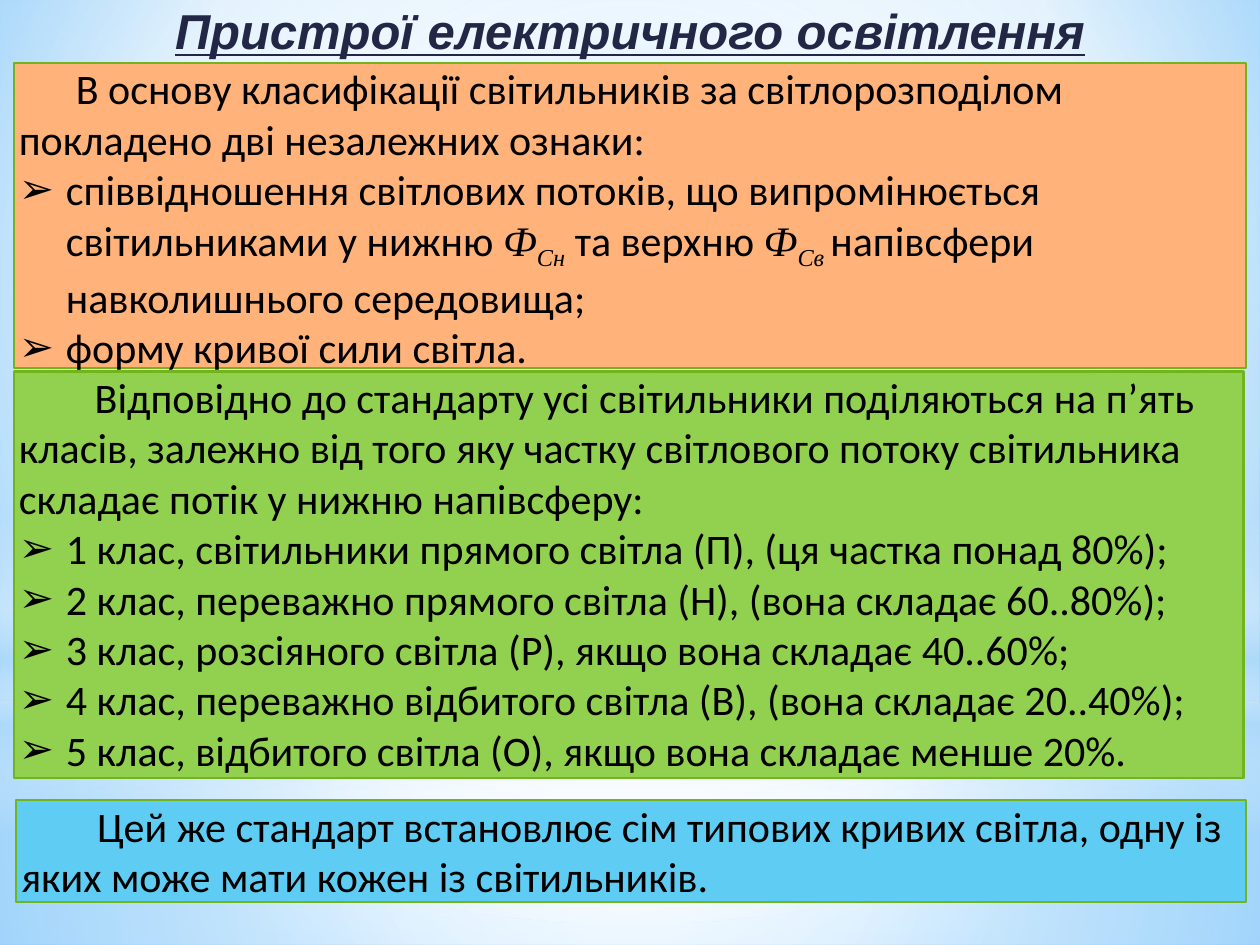
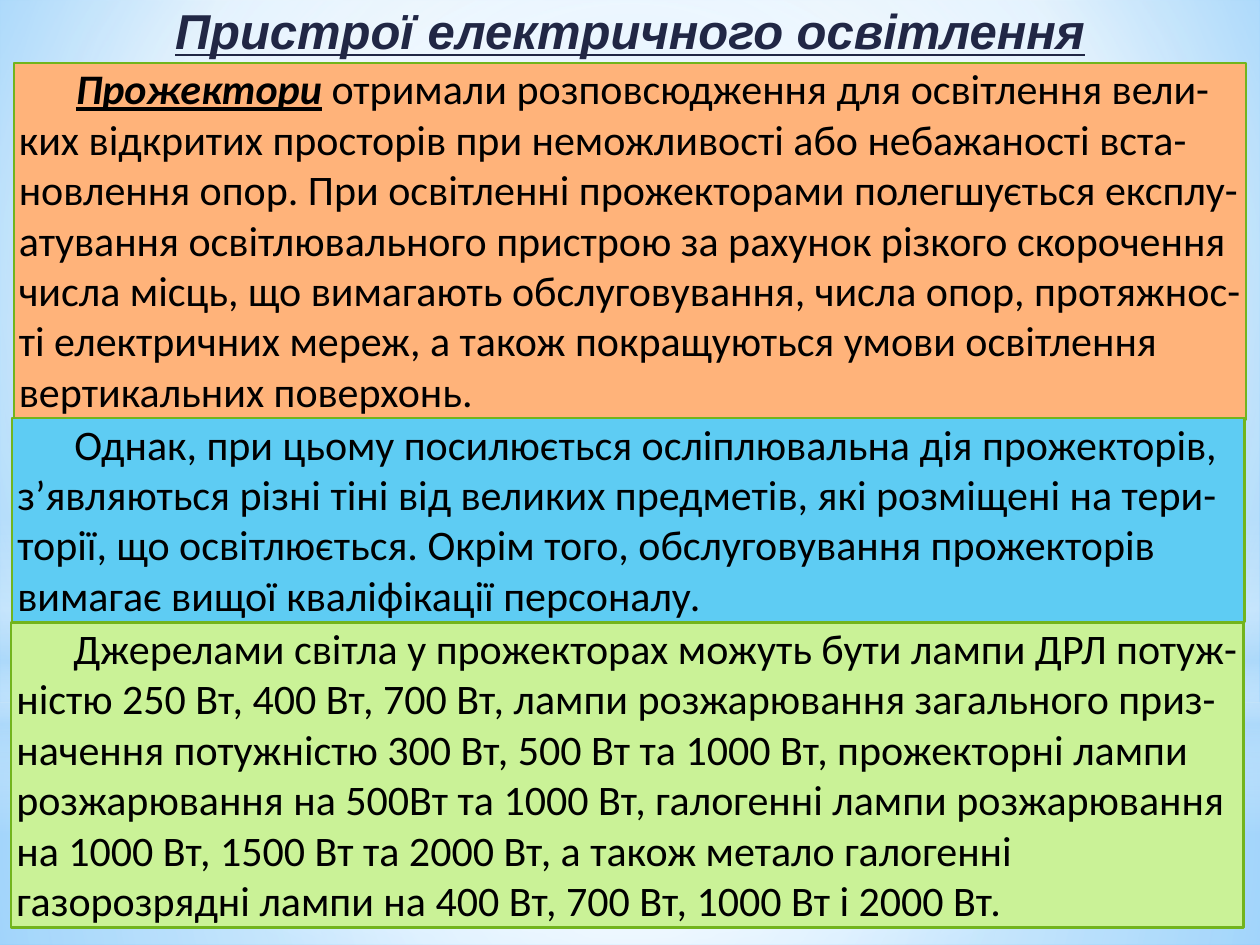
from lxml import etree
from pptx import Presentation
from pptx import util as u
from pptx.dml.color import RGBColor
from pptx.enum import shapes, text
from pptx.oxml import ns

ORANGE, GREEN, BLUE, LIME = "FFB37A", "92D050", "5ECCF3", "CAF297"
BORDER, INK, TITLE_INK = "72B41D", "000000", "212745"
WHITE, HAZE = "FFFFFF", "B4DCFA"
WIDTH, HEIGHT = 25.4, 19.05
HORIZON = 14.17
CENTRE = (50, 50, 50, 50)
TITLE = "Пристрої електричного освітлення"


def rgb(value):
    return RGBColor.from_string(value)


def child(parent, tag, **attributes):
    element = etree.SubElement(parent, ns.qn(tag))
    for name, value in attributes.items():
        element.set(name, str(value))
    return element


def set_gradient(properties, stops, focus=None):
    """Swap a solid fill for (position, colour, opacity) stops, in percent.

    With a focus rectangle the gradient is circular, otherwise it runs downwards.
    """
    solid = properties.find(ns.qn("a:solidFill"))
    gradient = etree.Element(ns.qn("a:gradFill"), rotWithShape="1")
    stop_list = child(gradient, "a:gsLst")
    for position, colour, opacity in stops:
        stop = child(stop_list, "a:gs", pos=position * 1000)
        tint = child(stop, "a:srgbClr", val=colour)
        if opacity < 100:
            child(tint, "a:alpha", val=opacity * 1000)
    if focus:
        circle = child(gradient, "a:path", path="circle")
        sides = {side: value * 1000 for side, value in zip("ltrb", focus)}
        child(circle, "a:fillToRect", **sides)
    else:
        child(gradient, "a:lin", ang=90 * 60000, scaled=0)
    properties.replace(solid, gradient)


class Deck:
    def __init__(self):
        self.presentation = Presentation()
        self.presentation.slide_width = u.Cm(WIDTH)
        self.presentation.slide_height = u.Cm(HEIGHT)
        self.layout = self.presentation.slide_layouts[6]
        self.slide = None

    def add_slide(self):
        first = self.slide is None
        self.slide = self.presentation.slides.add_slide(self.layout)
        if first:
            self.backdrop()
        self.title()

    def backdrop(self):
        """Put the sky gradient and its haze layers on the shared layout."""
        for placeholder in list(self.layout.placeholders):
            placeholder.element.getparent().remove(placeholder.element)
        self.layout.background.fill.solid()
        sky = self.layout.element.find(".//" + ns.qn("p:bgPr"))
        set_gradient(sky, [(0, "9ED5FF", 100), (60, WHITE, 100), (100, "5BB9FF", 100)],
                     (20, 10, 20, 60))
        rectangle, oval = shapes.MSO_SHAPE.RECTANGLE, shapes.MSO_SHAPE.OVAL
        self.haze(rectangle, HORIZON, HEIGHT - HORIZON,
                  [(0, WHITE, 91), (37, WHITE, 76), (100, HAZE, 79)], CENTRE)
        self.haze(rectangle, 0, HORIZON,
                  [(0, WHITE, 89), (48, WHITE, 62), (100, HAZE, 79)], CENTRE)
        self.haze(rectangle, 10.46, 6.35,
                  [(0, WHITE, 0), (29, WHITE, 30), (45, HAZE, 40),
                   (55, WHITE, 26), (65, HAZE, 60), (100, WHITE, 0)])
        self.haze(oval, 4.45, HORIZON, [(0, WHITE, 100), (56, WHITE, 0)], CENTRE)

    def haze(self, outline, top, height, stops, focus=None):
        layer = self.slide.shapes.add_shape(
            outline, 0, u.Cm(top), u.Cm(WIDTH), u.Cm(height))
        layer.shadow.inherit = False
        layer.fill.solid()
        layer.line.fill.background()
        set_gradient(layer.element.spPr, stops, focus)
        self.layout.shapes.element.append(layer.element)

    def frame(self, shape, side_margin):
        body = shape.text_frame
        body.word_wrap = True
        body.auto_size = text.MSO_AUTO_SIZE.SHAPE_TO_FIT_TEXT
        body.vertical_anchor = text.MSO_ANCHOR.TOP
        body.margin_left = body.margin_right = u.Cm(side_margin)
        body.margin_top = body.margin_bottom = 0
        return body

    def font(self, run, size, name, colour, emphasis=False, underline=False):
        run.font.size = u.Pt(size)
        run.font.name = name
        run.font.color.rgb = rgb(colour)
        run.font.bold = run.font.italic = emphasis
        run.font.underline = underline

    def title(self):
        heading = self.slide.shapes.add_textbox(
            u.Cm(0.3), u.Cm(0.2), u.Cm(24.8), u.Cm(1.02))
        body = self.frame(heading, 0)
        body.text = TITLE
        line = body.paragraphs[0]
        line.alignment = text.PP_ALIGN.CENTER
        line.line_spacing = 0.85
        self.font(line.runs[0], 28, "Arial", TITLE_INK, True, True)

    def panel(self, left, top, width, height, colour, intro, points=(), indent=1.15):
        """Draw a framed box with an indented intro and optional arrow points."""
        box = self.slide.shapes.add_shape(
            shapes.MSO_SHAPE.RECTANGLE, *map(u.Cm, (left, top, width, height)))
        box.shadow.inherit = False
        box.fill.solid()
        box.fill.fore_color.rgb = rgb(colour)
        box.line.color.rgb = rgb(BORDER)
        box.line.width = u.Pt(1.25)
        body = self.frame(box, 0.1)
        for number, content in enumerate([intro, *points]):
            line = body.add_paragraph() if number else body.paragraphs[0]
            line.alignment = text.PP_ALIGN.LEFT
            self.fill_line(line, content)
            properties = line._p.get_or_add_pPr()
            if number:
                properties.set("marL", str(u.Cm(0.95)))
                properties.set("indent", str(-u.Cm(0.95)))
                child(properties, "a:buFont", typeface="Arial")
                child(properties, "a:buChar", char="➢")
            else:
                properties.set("indent", str(u.Cm(indent)))

    def fill_line(self, line, content):
        """Fill a paragraph from a string or from (wording, style) pieces."""
        pieces = [(content, "plain")] if isinstance(content, str) else content
        for wording, style in pieces:
            run = line.add_run()
            run.text = wording
            symbol = style in ("symbol", "index")
            self.font(run, 24, "Times New Roman" if symbol else "Calibri", INK,
                      style == "term", style == "term")
            if symbol:
                run.font.italic = True
            if style == "index":
                run._r.get_or_add_rPr().set("baseline", "-25000")


def main():
    deck = Deck()

    deck.add_slide()
    flux_ratio = [
        ("співвідношення світлових потоків, що випромінюється світильниками у нижню ",
         "plain"),
        ("Ф", "symbol"), ("Сн", "index"), (" та верхню ", "plain"),
        ("Ф", "symbol"), ("Св ", "index"),
        ("напівсфери навколишнього середовища;", "plain")]
    deck.panel(
        0.28, 1.27, 24.84, 6.15, ORANGE,
        "В основу класифікації світильників за світлорозподілом "
        "покладено дві незалежних ознаки:",
        [flux_ratio, "форму кривої сили світла."])
    light_classes = [
        "світильники прямого світла (П), (ця частка понад 80%);",
        "переважно прямого світла (Н), (вона складає 60..80%);",
        "розсіяного світла (Р), якщо вона складає 40..60%;",
        "переважно відбитого світла (В), (вона складає 20..40%);",
        "відбитого світла (О), якщо вона складає менше 20%."]
    deck.panel(
        0.28, 7.49, 24.79, 8.2, GREEN,
        "Відповідно до стандарту усі світильники поділяються на п’ять класів, "
        "залежно від того яку частку світлового потоку світильника складає потік "
        "у нижню напівсферу:",
        [f"{number} клас, {light}" for number, light in enumerate(light_classes, 1)],
        indent=1.53)
    deck.panel(
        0.33, 16.13, 24.79, 2.06, BLUE,
        "Цей же стандарт встановлює сім типових кривих світла, одну із яких може "
        "мати кожен із світильників.",
        indent=1.53)

    deck.add_slide()
    deck.panel(
        0.28, 1.27, 24.84, 7.19, ORANGE,
        [("Прожектори", "term"),
         (" отримали розповсюдження для освітлення вели-ких відкритих просторів при "
          "неможливості або небажаності вста-новлення опор. При освітленні "
          "прожекторами полегшується експлу-атування освітлювального пристрою за "
          "рахунок різкого скорочення числа місць, що вимагають обслуговування, "
          "числа опор, протяжнос-ті електричних мереж, а також покращуються умови "
          "освітлення вертикальних поверхонь.", "plain")])
    deck.panel(
        0.25, 8.43, 24.84, 4.11, BLUE,
        "Однак, при цьому посилюється осліплювальна дія прожекторів, з’являються "
        "різні тіні від великих предметів, які розміщені на тери-торії, що "
        "освітлюється. Окрім того, обслуговування прожекторів вимагає вищої "
        "кваліфікації персоналу.")
    deck.panel(
        0.23, 12.55, 24.84, 6.15, LIME,
        "Джерелами світла у прожекторах можуть бути лампи ДРЛ потуж-ністю 250 Вт, "
        "400 Вт, 700 Вт, лампи розжарювання загального приз-начення потужністю "
        "300 Вт, 500 Вт та 1000 Вт, прожекторні лампи розжарювання на 500Вт та "
        "1000 Вт, галогенні лампи розжарювання на 1000 Вт, 1500 Вт та 2000 Вт, "
        "а також метало галогенні газорозрядні лампи на 400 Вт, 700 Вт, 1000 Вт "
        "і 2000 Вт.")

    deck.presentation.save("out.pptx")


if __name__ == "__main__":
    main()
